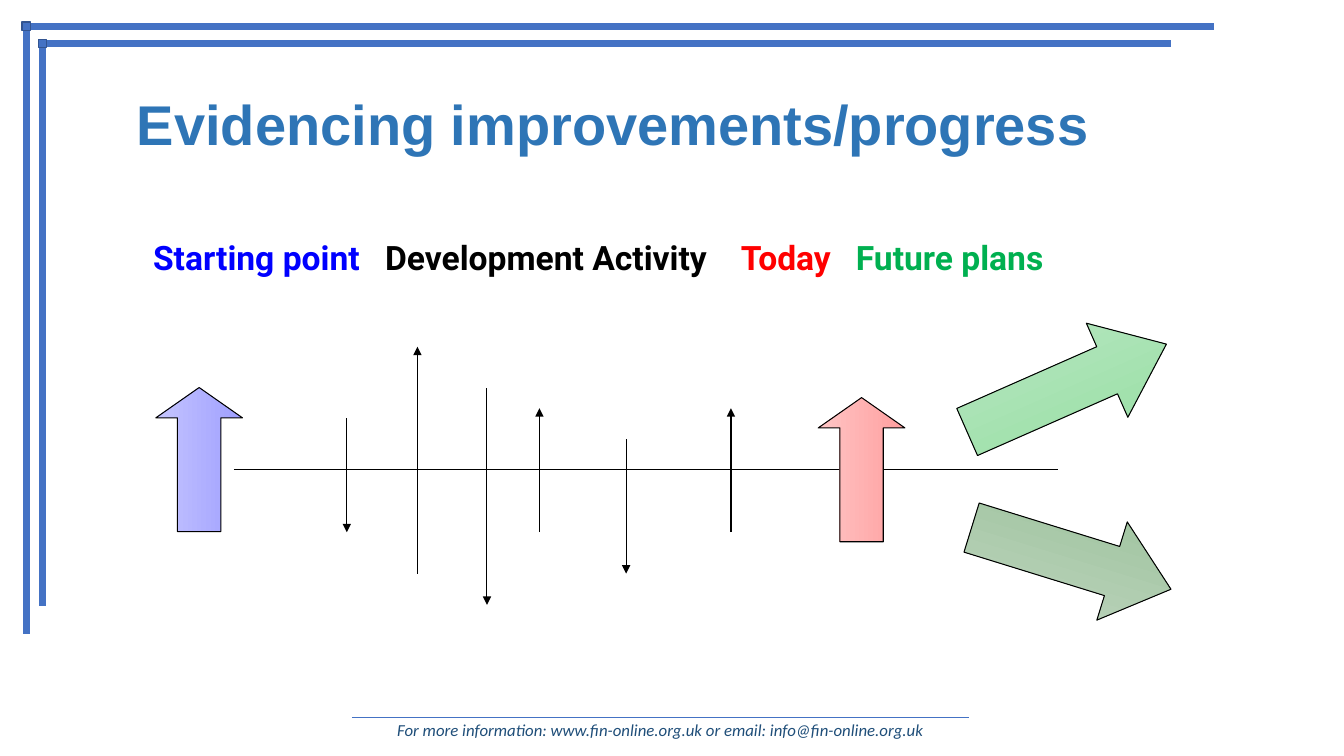
from typing import NamedTuple

from lxml import etree
from pptx import Presentation
from pptx.dml.color import RGBColor
from pptx.enum.shapes import MSO_CONNECTOR, MSO_SHAPE
from pptx.enum.text import MSO_ANCHOR, PP_ALIGN
from pptx.oxml.ns import qn
from pptx.util import Inches, Pt

STRAIGHT = MSO_CONNECTOR.STRAIGHT
RECTANGLE, LEFT_ARROW = MSO_SHAPE.RECTANGLE, MSO_SHAPE.LEFT_ARROW
TOP, MIDDLE = MSO_ANCHOR.TOP, MSO_ANCHOR.MIDDLE
LEFT, CENTER = PP_ALIGN.LEFT, PP_ALIGN.CENTER

COLORS = {
    "frame": "4472C4", "frame edge": "325491", "ink": "000000",
    "title": "2E75B6", "footer": "1F4E79",
    "start": "0000FF", "today": "FF0000", "future": "00B050",
    "blue": "9F9FFF", "pale blue": "C5C5FF",
    "red": "FF9F9F", "pale red": "FFC5C5",
    "olive": "98C098", "pale olive": "C1D6C1",
    "green": "91DD9F", "pale green": "BDE8C5",
}


class Box(NamedTuple):
    left: float
    top: float
    width: float
    height: float


class Run(NamedTuple):
    text: str
    color: str


class Bar(NamedTuple):
    """A frame corner: its square, where the bars run to and start from."""
    square: Box
    across: tuple[float, float, float]
    down_to: float


class Milestone(NamedTuple):
    x: float
    start: float
    end: float


class BlockArrow(NamedTuple):
    box: Box
    rotation: float
    head: float
    color: str
    gradient_angle: float


CORNERS = [
    Bar(Box(0.22, 0.22, 0.08, 0.08), (0.26, 0.26, 12.04), 6.29),
    Bar(Box(0.38, 0.39, 0.08, 0.08), (0.43, 0.43, 11.61), 6.01),
]
MILESTONES = [
    Milestone(3.44, 4.15, 5.28),
    Milestone(4.14, 5.69, 3.44),
    Milestone(4.83, 3.85, 6),
    Milestone(6.21, 4.36, 5.69),
    Milestone(5.35, 5.28, 4.05),
    Milestone(7.25, 5.28, 4.05),
]
BLOCK_ARROWS = [
    BlockArrow(Box(1.26, 4.13, 1.43, 0.86), 90, 0.35, "blue", 270),
    BlockArrow(Box(7.83, 4.23, 1.43, 0.86), 90, 0.35, "red", 270),
    BlockArrow(Box(9.59, 5.03, 2.07, 1.02), 197.2, 0.6, "olive", 90),
    BlockArrow(Box(9.5, 3.34, 2.16, 1.02), 156.2, 0.63, "green", 270),
]
STAGES = [
    Run("Starting point", "start"),
    Run("Development Activity", "ink"),
    Run("Today", "today"),
    Run("Future plans", "future"),
]
STAGE_TABS = [2.3, 5.83, 6.97]


def rgb(name: str) -> RGBColor:
    return RGBColor.from_string(COLORS[name])


def add_line(shapes, x1: float, y1: float, x2: float, y2: float,
             color: str, width: float, arrow: bool = False):
    line = shapes.add_connector(STRAIGHT, Inches(x1), Inches(y1), Inches(x2), Inches(y2))
    line.line.color.rgb = rgb(color)
    line.line.width = Pt(width)
    if arrow:
        etree.SubElement(line.line._get_or_add_ln(), qn("a:tailEnd"), type="triangle")
    etree.SubElement(line._element.spPr, qn("a:effectLst"))
    return line


def add_outlined(shapes, kind, box: Box, color: str, width: float):
    shape = shapes.add_shape(kind, *map(Inches, box))
    shape.shadow.inherit = False
    shape.line.color.rgb = rgb(color)
    shape.line.width = Pt(width)
    return shape


def add_corner(shapes, corner: Bar) -> None:
    x, y, end = corner.across
    add_line(shapes, x, y, end, y, "frame", 5)
    middle = corner.square.left + corner.square.width / 2
    down = add_line(shapes, middle, corner.square.top, middle, corner.down_to, "frame", 5)
    square = add_outlined(shapes, RECTANGLE, corner.square, "frame edge", 1)
    square.fill.solid()
    square.fill.fore_color.rgb = rgb("frame")
    down.begin_connect(square, 0)


def add_block_arrow(shapes, arrow: BlockArrow) -> None:
    shape = add_outlined(shapes, LEFT_ARROW, arrow.box, "ink", 0.75)
    shape.rotation = arrow.rotation
    shape.adjustments[1] = arrow.head
    shape.fill.gradient()
    shape.fill.gradient_angle = arrow.gradient_angle
    shades = (arrow.color, f"pale {arrow.color}")
    for position, (stop, shade) in enumerate(zip(shape.fill.gradient_stops, shades)):
        stop.position = position
        stop.color.rgb = rgb(shade)


def add_text(shapes, box: Box, runs: list[Run], font: dict, anchor=TOP,
             align=LEFT, tabs: list[float] | None = None) -> None:
    """Write the runs on one line, parted by tab stops."""
    frame = shapes.add_textbox(*map(Inches, box)).text_frame
    frame.word_wrap = True
    frame.vertical_anchor = anchor
    paragraph = frame.paragraphs[0]
    if tabs:
        tab_list = etree.SubElement(paragraph._p.get_or_add_pPr(), qn("a:tabLst"))
        for stop in tabs:
            etree.SubElement(tab_list, qn("a:tab"), pos=str(Inches(stop)), algn="l")
    paragraph.alignment = align
    paragraph.line_spacing = 0.9
    for index, part in enumerate(runs):
        run = paragraph.add_run()
        run.text = f"\t{part.text}" if index else part.text
        run.font.color.rgb = rgb(part.color)
        for attribute, value in font.items():
            setattr(run.font, attribute, value)


def main() -> None:
    deck = Presentation()
    deck.slide_width, deck.slide_height = Inches(13.33), Inches(7.5)
    shapes = deck.slides.add_slide(deck.slide_layouts[6]).shapes

    for corner in CORNERS:
        add_corner(shapes, corner)
    add_text(shapes, Box(2.41, 7.05, 8.28, 0.4),
             [Run("For more information: www.fin-online.org.uk or email: "
                  "info@fin-online.org.uk", "footer")],
             {"name": "Calibri", "size": Pt(12), "italic": True}, MIDDLE, CENTER)
    add_line(shapes, 3.49, 7.12, 9.61, 7.12, "frame", 0.5)

    add_text(shapes, Box(1.42, 2.35, 10.81, 1.05), STAGES,
             {"name": "Roboto", "size": Pt(24), "bold": True}, tabs=STAGE_TABS)
    add_line(shapes, 2.32, 4.66, 10.49, 4.66, "ink", 0.75)
    for mark in MILESTONES:
        add_line(shapes, mark.x, mark.start, mark.x, mark.end, "ink", 0.75, arrow=True)
    for arrow in BLOCK_ARROWS:
        add_block_arrow(shapes, arrow)
    add_text(shapes, Box(1.26, 0.73, 10.81, 1.06),
             [Run("Evidencing improvements/progress", "title")],
             {"name": "Arial", "size": Pt(40), "bold": True}, MIDDLE)

    deck.save("out.pptx")


if __name__ == "__main__":
    main()
